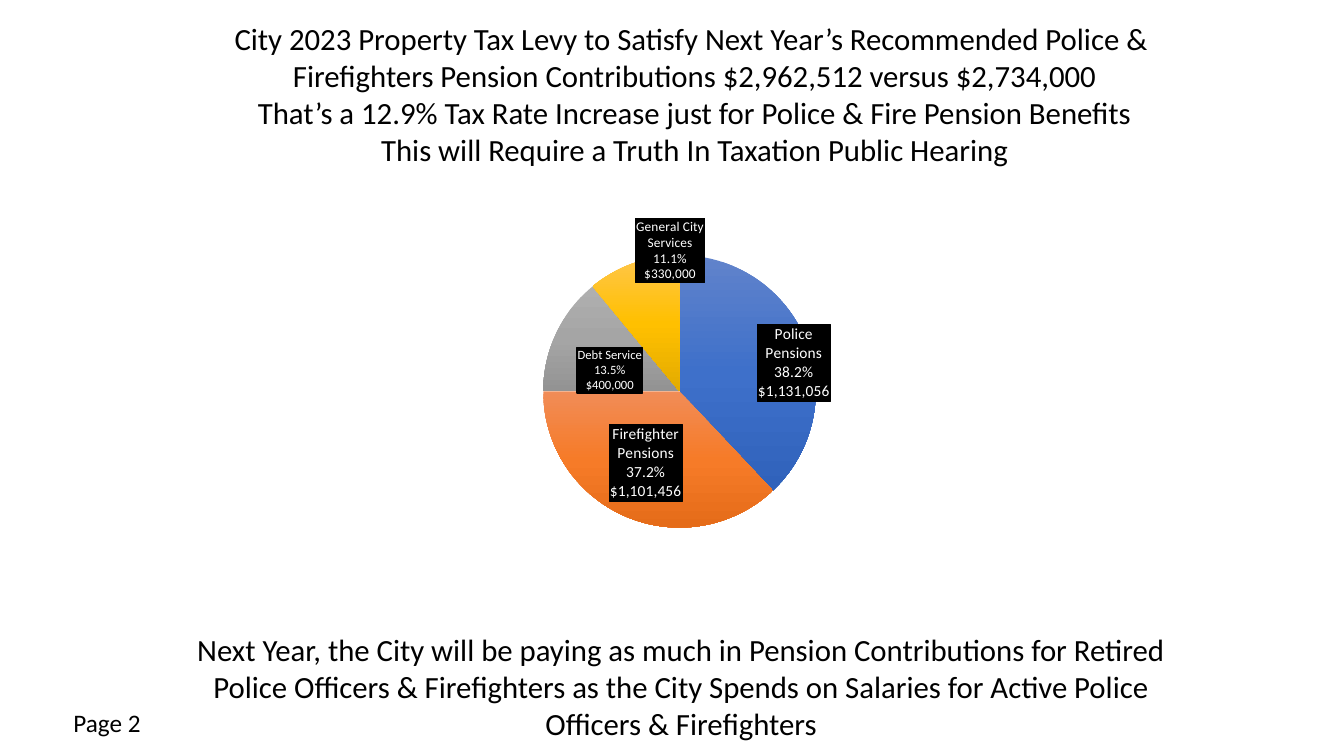
from pptx import Presentation
from pptx.chart.data import CategoryChartData
from pptx.dml.color import RGBColor
from pptx.enum.chart import XL_CHART_TYPE, XL_LABEL_POSITION
from pptx.enum.text import MSO_ANCHOR, PP_ALIGN
from pptx.oxml import parse_xml
from pptx.util import Inches, Pt

THEME = {
    "font": "Calibri", "ink": "000000", "label_ink": "FFFFFF", "label_fill": "000000",
    "statement": 22, "page_number": 18, "chart": 10,
}
SLICES = [
    ("Police\vPensions", 38.2, "$1,131,056", 11, (6.4, -4.3), ("6183CB", "3E70CA", "3062BB")),
    ("Firefighter Pensions", 37.2, "$1,101,456", 11, (-4, -2.2), ("F18C57", "F67B28", "E56C19")),
    ("Debt Service", 13.5, "$400,000", 9, (3.3, 2.7), ("AFAFAF", "A5A5A5", "939393")),
    ("General City Services", 11.1, "$330,000", 9.5, (0, -11.5), ("FFC64B", "FFC000", "E3AB00")),
]
CHART_NS = 'xmlns:c="http://schemas.openxmlformats.org/drawingml/2006/chart"'
DRAW_NS = 'xmlns:a="http://schemas.openxmlformats.org/drawingml/2006/main"'

deck = Presentation()
deck.slide_width, deck.slide_height = Inches(13.33), Inches(7.5)
page = deck.slides.add_slide(deck.slide_layouts[6])


def add_text(lines, left, top, width, height, size, align=PP_ALIGN.CENTER, anchor=MSO_ANCHOR.MIDDLE):
    box = page.shapes.add_textbox(Inches(left), Inches(top), Inches(width), Inches(height))
    frame = box.text_frame
    frame.word_wrap = True
    frame.vertical_anchor = anchor
    for index, line in enumerate(lines):
        para = frame.paragraphs[0] if index == 0 else frame.add_paragraph()
        para.alignment = align
        span = para.add_run()
        span.text = line
        span.font.name = THEME["font"]
        span.font.size = Pt(size)
        span.font.color.rgb = RGBColor.from_string(THEME["ink"])


def manual_layout(x, y, before="", after=""):
    return parse_xml(
        f'<c:layout {CHART_NS}><c:manualLayout>{before}'
        f'<c:x val="{x / 100}"/><c:y val="{y / 100}"/>{after}</c:manualLayout></c:layout>')


add_text([
    "City 2023 Property Tax Levy to Satisfy Next Year’s Recommended Police & ",
    "Firefighters Pension Contributions $2,962,512 versus $2,734,000",
    "That’s a 12.9% Tax Rate Increase just for Police & Fire Pension Benefits",
    "This will Require a Truth In Taxation Public Hearing",
], 0.45, 0.15, 12.88, 1.56, THEME["statement"])

data = CategoryChartData(number_format="0")
data.categories = [part[0].replace("\v", " ") for part in SLICES]
for series_name in ("Series 1", "Series 2"):
    data.add_series(series_name, [round(part[1]) for part in SLICES])
chart = page.shapes.add_chart(
    XL_CHART_TYPE.PIE, Inches(4.49), Inches(1.76), Inches(4.61), Inches(4.36), data).chart
chart.replace_data(data)
chart.has_legend = False
chart.has_title = False
chart.font.name = THEME["font"]
chart.font.size = Pt(THEME["chart"])
chart.font.color.rgb = RGBColor.from_string(THEME["ink"])
plot = chart.plots[0]
plot.vary_by_categories = True
plot_area = chart._chartSpace.chart.plotArea
for old_layout in plot_area.findall("{*}layout"):
    plot_area.remove(old_layout)
plot_area.insert(0, manual_layout(
    19.3, 17.7,
    before='<c:layoutTarget val="inner"/><c:xMode val="edge"/><c:yMode val="edge"/>',
    after='<c:w val="0.59"/><c:h val="0.62"/>'))

for series in plot.series:
    for index, part in enumerate(SLICES):
        stops = "".join(
            f'<a:gs pos="{position}"><a:srgbClr val="{color}"/></a:gs>'
            for position, color in zip((0, 50000, 100000), part[-1]))
        point = series._element.get_or_add_dPt_for_point(index)
        point.get_or_add_spPr().append(parse_xml(
            f'<a:gradFill {DRAW_NS}><a:gsLst>{stops}</a:gsLst><a:lin ang="5400000" scaled="0"/></a:gradFill>'))

label_paint = f'<a:solidFill><a:srgbClr val="{THEME["label_fill"]}"/></a:solidFill>'
for index, (name, percent, amount, size, offset, _) in enumerate(SLICES):
    label = plot.series[0].points[index].data_label
    frame = label.text_frame
    lines = name.split("\v") + [f"{percent}%", amount]
    for row, line in enumerate(lines):
        para = frame.paragraphs[0] if row == 0 else frame.add_paragraph()
        span = para.add_run()
        span.text = line
        span.font.name = THEME["font"]
        span.font.size = Pt(size)
        span.font.color.rgb = RGBColor.from_string(THEME["label_ink"])
    label.position = XL_LABEL_POSITION.INSIDE_END
    element = label._dLbl
    element.find("{*}tx").addnext(parse_xml(
        f'<c:spPr {CHART_NS} {DRAW_NS}>{label_paint}<a:ln w="12700">{label_paint}</a:ln></c:spPr>'))
    element.find("{*}idx").addnext(manual_layout(*offset))

add_text([
    "Next Year, the City will be paying as much in Pension Contributions for Retired",
    "Police Officers & Firefighters as the City Spends on Salaries for Active Police",
    "Officers & Firefighters",
], 1.71, 6.21, 10.09, 1.19, THEME["statement"])
add_text(["Page 2"], 0.63, 6.97, 1.02, 0.4, THEME["page_number"], PP_ALIGN.LEFT, MSO_ANCHOR.TOP)

deck.save("out.pptx")
